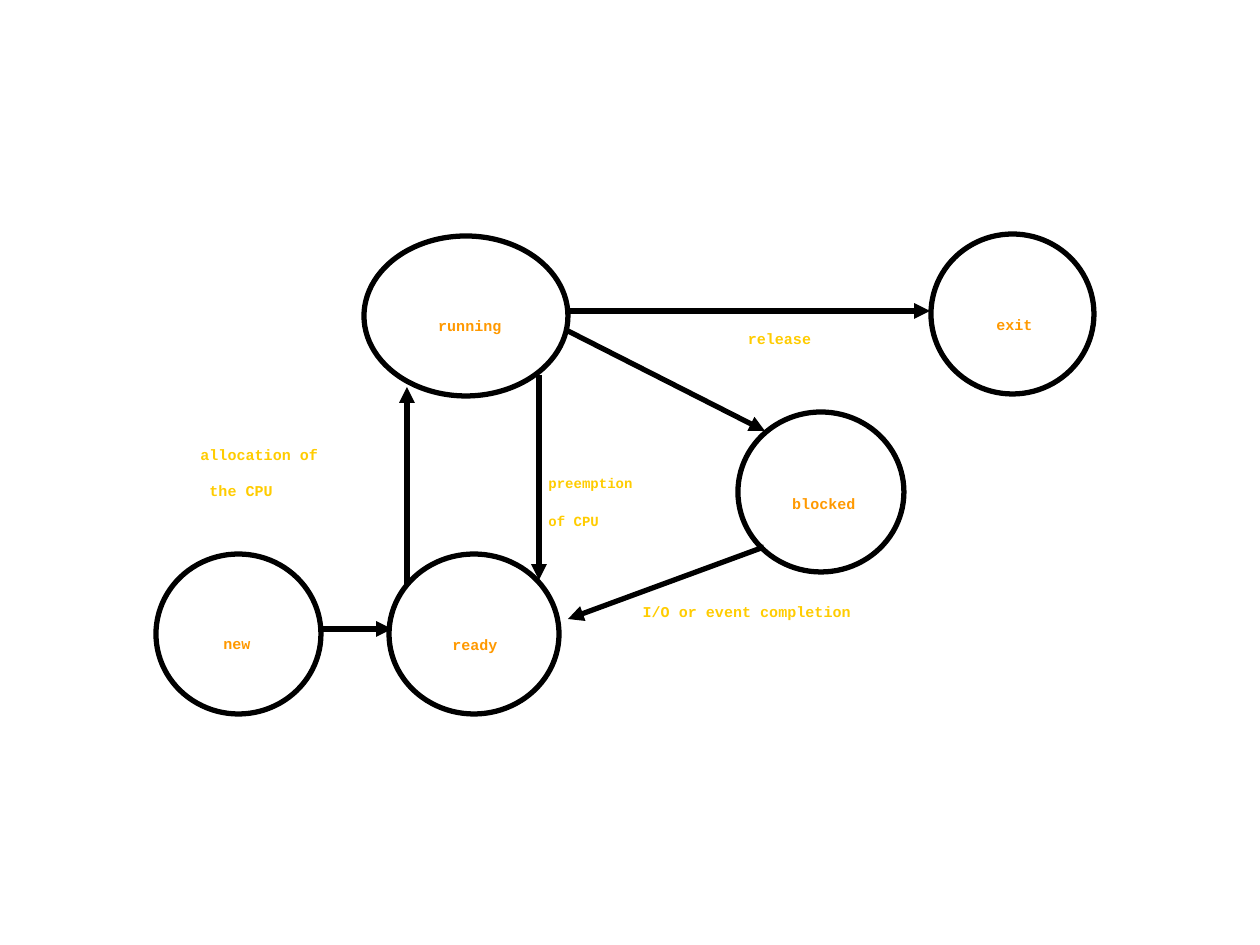
from typing import NamedTuple

from lxml import etree
from pptx import Presentation
from pptx.dml.color import RGBColor
from pptx.enum.shapes import MSO_CONNECTOR, MSO_SHAPE
from pptx.enum.text import PP_ALIGN
from pptx.oxml.ns import qn
from pptx.util import Emu, Pt

ELLIPSE = MSO_SHAPE.OVAL
STRAIGHT = MSO_CONNECTOR.STRAIGHT
LEFT, CENTER = PP_ALIGN.LEFT, PP_ALIGN.CENTER

EMU_PER_PX = 914400 / 126
COLORS = {"outline": "000000", "state": "FF9900", "event": "FFCC00"}
FONT = "Courier New"
LINE_WIDTH = Pt(3)
STATE_HEIGHT = 160


class Box(NamedTuple):
    left: int
    top: int
    width: int
    height: int


class State(NamedTuple):
    name: str
    left: int
    top: int
    width: int
    label: Box


class Event(NamedTuple):
    lines: list[str]
    box: Box
    align: PP_ALIGN = CENTER
    size: float = 8.6
    pitch: float = 20.6
    before: float = 0


class Transition(NamedTuple):
    start: tuple[int, int]
    end: tuple[int, int]


STATES = [
    State("blocked", 738, 412, 166, Box(665, 470, 318, 58)),
    State("running", 364, 236, 204, Box(311, 292, 318, 57)),
    State("ready", 389, 554, 170, Box(392, 611, 166, 58)),
    State("exit", 931, 234, 163, Box(871, 291, 287, 58)),
    State("new", 156, 554, 165, Box(154, 610, 166, 58)),
]

EVENTS = [
    Event(["allocation of", " the CPU"], Box(188, 421, 306, 115), LEFT),
    Event(["preemption", "of CPU"], Box(536, 450, 220, 89), LEFT,
          size=8, pitch=20, before=1.6),
    Event(["release"], Box(605, 305, 349, 52)),
    Event(["I/O or event completion"], Box(588, 578, 318, 52)),
]

TRANSITIONS = [
    Transition((407, 585), (407, 387)),  # ready to running
    Transition((539, 375), (539, 580)),  # running to ready
    Transition((764, 547), (568, 619)),  # blocked to ready
    Transition((568, 331), (765, 431)),  # running to blocked
    Transition((323, 629), (392, 629)),  # new to ready
    Transition((568, 311), (930, 311)),  # running to exit
]


def px(length: int) -> Emu:
    return Emu(round(length * EMU_PER_PX))


def rgb(name: str) -> RGBColor:
    return RGBColor.from_string(COLORS[name])


def add_text(slide, lines: list[str], box: Box, *, color: str,
             align: PP_ALIGN = CENTER, size: float = 8.6,
             pitch: float = 20.6, before: float = 0) -> None:
    frame = slide.shapes.add_textbox(*map(px, box)).text_frame
    frame.word_wrap = True
    for index, line in enumerate(lines):
        paragraph = frame.add_paragraph() if index else frame.paragraphs[0]
        paragraph.alignment = align
        paragraph.line_spacing = Pt(pitch)
        paragraph.space_before = Pt(before)
        run = paragraph.add_run()
        run.text = line
        run.font.name = FONT
        run.font.size = Pt(size)
        run.font.bold = True
        run.font.color.rgb = rgb(color)


def style_outline(line) -> None:
    line.color.rgb = rgb("outline")
    line.width = LINE_WIDTH


def add_state(slide, state: State) -> None:
    add_text(slide, [state.name], state.label, color="state")
    ellipse = slide.shapes.add_shape(
        ELLIPSE, px(state.left), px(state.top), px(state.width), px(STATE_HEIGHT))
    ellipse.shadow.inherit = False
    ellipse.fill.background()
    style_outline(ellipse.line)


def add_transition(slide, transition: Transition) -> None:
    arrow = slide.shapes.add_connector(
        STRAIGHT, *map(px, transition.start + transition.end))
    style_outline(arrow.line)
    etree.SubElement(arrow.line._get_or_add_ln(), qn("a:tailEnd"), type="triangle")
    etree.SubElement(arrow._element.spPr, qn("a:effectLst"))


def main() -> None:
    presentation = Presentation()
    presentation.slide_width, presentation.slide_height = px(1260), px(945)
    slide = presentation.slides.add_slide(presentation.slide_layouts[6])

    # Event labels
    for event in EVENTS:
        add_text(slide, event.lines, event.box, color="event", align=event.align,
                 size=event.size, pitch=event.pitch, before=event.before)

    # Process states
    for state in STATES:
        add_state(slide, state)

    # Transitions between states
    for transition in TRANSITIONS:
        add_transition(slide, transition)

    presentation.save("out.pptx")


if __name__ == "__main__":
    main()
